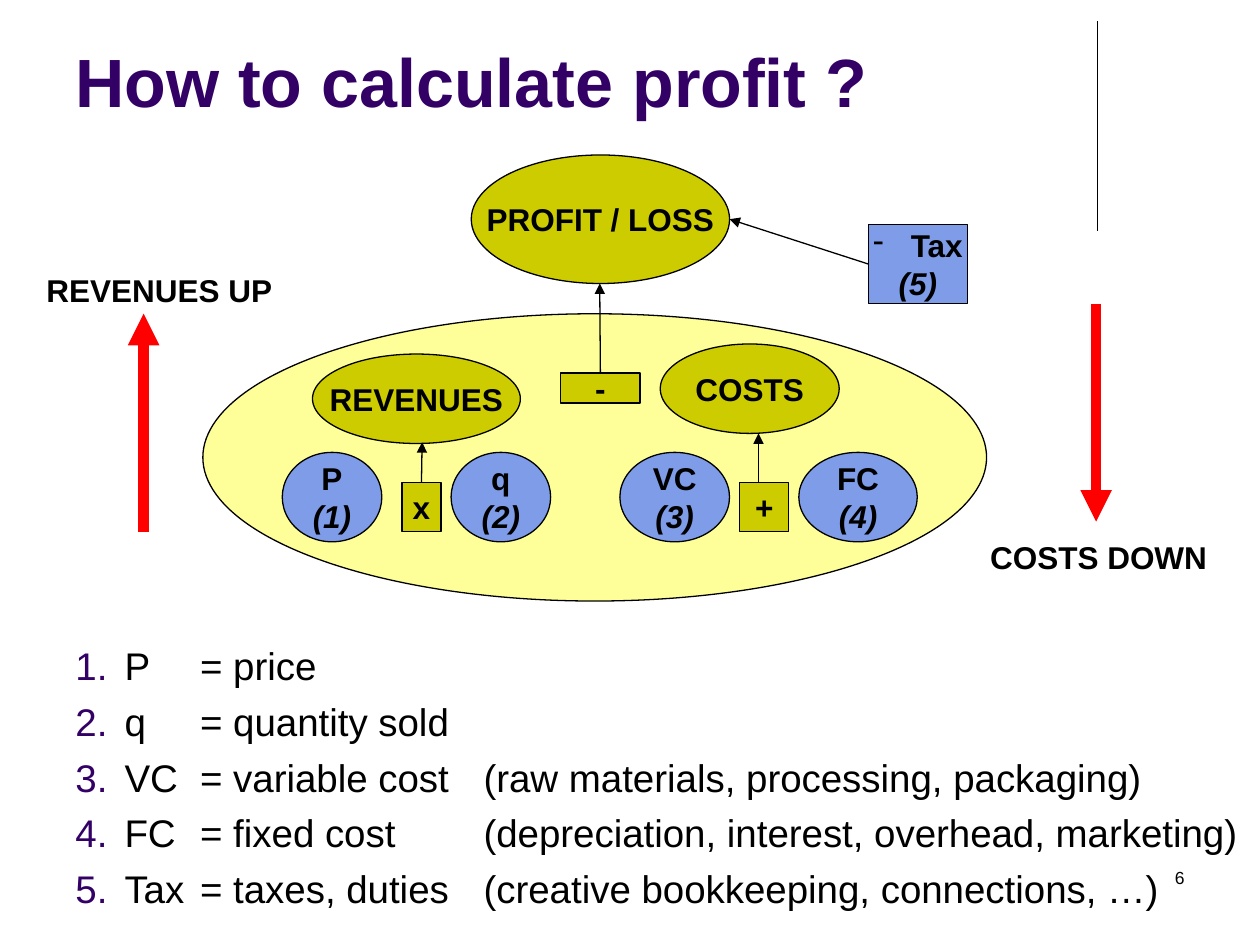
from lxml import etree
from pptx import Presentation
from pptx.dml.color import RGBColor
from pptx.enum import shapes, text
from pptx.oxml.ns import qn
from pptx.util import Inches, Pt

BLACK = RGBColor(0x00, 0x00, 0x00)
PURPLE = RGBColor(0x33, 0x00, 0x66)
OLIVE = RGBColor(0xCC, 0xCC, 0x00)
CREAM = RGBColor(0xFF, 0xFF, 0x99)
BLUE = RGBColor(0x7E, 0x9C, 0xE8)
RED = RGBColor(0xFF, 0x00, 0x00)
OVAL, RECT = shapes.MSO_SHAPE.OVAL, shapes.MSO_SHAPE.RECTANGLE
LEFT, MID, RIGHT = text.PP_ALIGN.LEFT, text.PP_ALIGN.CENTER, text.PP_ALIGN.RIGHT
TOP, LOW = text.MSO_ANCHOR.TOP, text.MSO_ANCHOR.BOTTOM

# Content: key, form, fill, (left, top, width, height), lines
NODES = [
    ("all", OVAL, CREAM, (1.61, 2.49, 6.22, 2.28), []),
    ("profit", OVAL, OLIVE, (3.74, 1.23, 2.05, 1.02), ["PROFIT / LOSS"]),
    ("revenues", OVAL, OLIVE, (2.48, 2.81, 1.65, 0.71), ["REVENUES"]),
    ("minus", RECT, OLIVE, (4.45, 2.96, 0.63, 0.24), ["-"]),
    ("costs", OVAL, OLIVE, (5.24, 2.73, 1.42, 0.71), ["COSTS"]),
    ("tax", RECT, BLUE, (6.89, 1.78, 0.79, 0.63), ["Tax", "(5)"]),
    ("q", OVAL, BLUE, (3.58, 3.59, 0.79, 0.71), ["q", "(2)"]),
    ("p", OVAL, BLUE, (2.24, 3.59, 0.79, 0.71), ["P", "(1)"]),
    ("vc", OVAL, BLUE, (4.92, 3.59, 0.87, 0.71), ["VC", "(3)"]),
    ("fc", OVAL, BLUE, (6.34, 3.59, 0.94, 0.71), ["FC", "(4)"]),
    ("times", RECT, OLIVE, (3.19, 3.83, 0.31, 0.39), ["x"]),
    ("plus", RECT, OLIVE, (5.87, 3.83, 0.39, 0.39), ["+"]),
]
# Start, end, colour, width, arrowhead, (joined node, side)
LINES = [
    ((8.71, 0.17), (8.71, 1.83), BLACK, 0.75, False, None),
    ((3.35, 3.83), (3.35, 3.51), BLACK, 0.75, True, ("times", 0)),
    ((6.02, 3.83), (6.02, 3.44), BLACK, 0.75, True, None),
    ((1.14, 4.22), (1.14, 2.49), RED, 6, True, None),
    ((8.7, 2.41), (8.7, 4.14), RED, 6, True, None),
    ((6.89, 2.1), (5.79, 1.74), BLACK, 0.75, True, ("tax", 1)),
    ((4.76, 2.96), (4.76, 2.25), BLACK, 0.75, True, ("minus", 0)),
]
# Text, place, size, colour, bold, alignment, anchor
LABELS = [
    ("How to calculate profit ?", (0.5, 0.13, 8.25, 0.88), 39, PURPLE, True, LEFT, LOW),
    ("REVENUES UP", (0.27, 2.1, 2.05, 0.4), 18, BLACK, True, LEFT, TOP),
    ("COSTS DOWN", (7.76, 4.22, 2.05, 0.4), 18, BLACK, True, LEFT, TOP),
    ("6", (7.17, 6.83, 2.33, 0.5), 10, BLACK, False, RIGHT, TOP),
]
TERMS = [
    ("P", "= price"),
    ("q", "= quantity sold"),
    ("VC", "= variable cost", "(raw materials, processing, packaging)"),
    ("FC", "= fixed cost", "(depreciation, interest, overhead, marketing)"),
    ("Tax", "= taxes, duties", "(creative bookkeeping, connections, …)"),
]
TABS = [0.99, 3.24]

deck = Presentation()
deck.slide_width, deck.slide_height = Inches(10), Inches(7.5)
slide = deck.slides.add_slide(deck.slide_layouts[6])


def style(para, size, color, bold=False, italic=None):
    font = para.font
    font.name, font.size, font.bold, font.italic = "Arial", Pt(size), bold, italic
    font.color.rgb = color


def hang(para, inset):
    props = para._p.get_or_add_pPr()
    props.set("marL", str(Inches(inset)))
    props.set("indent", str(-Inches(inset)))
    return props


def add_box(place):
    frame = slide.shapes.add_textbox(*map(Inches, place)).text_frame
    frame.word_wrap = True
    return frame


# Nodes of the profit tree
nodes = {}
for key, form, fill, place, lines in NODES:
    node = nodes[key] = slide.shapes.add_shape(form, *map(Inches, place))
    node.shadow.inherit = False
    node.fill.solid()
    node.fill.fore_color.rgb = fill
    node.line.color.rgb, node.line.width = BLACK, Pt(0.75)
    if not lines:
        continue
    frame = node.text_frame
    frame.word_wrap = False
    frame.vertical_anchor = text.MSO_ANCHOR.MIDDLE
    frame.text = "\n".join(lines)
    for i, para in enumerate(frame.paragraphs):
        para.alignment = MID
        if key == "tax" and i == 0:
            etree.SubElement(hang(para, 0.3), qn("a:buChar")).set("char", "-")
        style(para, 18, BLACK, True, i > 0)

# Lines and arrows
for start, end, color, width, arrow, tie in LINES:
    line = slide.shapes.add_connector(
        shapes.MSO_CONNECTOR.STRAIGHT, *map(Inches, start + end))
    if tie:
        key, side = tie
        line.begin_connect(nodes[key], side)
    line.line.color.rgb, line.line.width = color, Pt(width)
    if arrow:
        tail = etree.SubElement(line.line._get_or_add_ln(), qn("a:tailEnd"))
        tail.set("type", "triangle")
    etree.SubElement(line._element.spPr, qn("a:effectLst"))

# Title, labels and page number
for words, place, size, color, bold, align, anchor in LABELS:
    frame = add_box(place)
    frame.vertical_anchor = anchor
    frame.text = words
    frame.paragraphs[0].alignment = align
    style(frame.paragraphs[0], size, color, bold)

# Numbered terms
frame = add_box((0.5, 5.05, 9.5, 2.45))
frame.margin_right = 0
frame.text = "\n".join("\t".join(term) for term in TERMS)
for i, para in enumerate(frame.paragraphs):
    props = hang(para, 0.39)
    tint = etree.SubElement(props, qn("a:buClr"))
    etree.SubElement(tint, qn("a:srgbClr")).set("val", str(PURPLE))
    etree.SubElement(props, qn("a:buAutoNum")).set("type", "arabicPeriod")
    stops = etree.SubElement(props, qn("a:tabLst"))
    for pos in TABS:
        stop = etree.SubElement(stops, qn("a:tab"))
        stop.set("pos", str(Inches(pos)))
        stop.set("algn", "l")
    if i:
        para.space_before = Pt(5.4)
    style(para, 22, BLACK)

deck.save("out.pptx")
